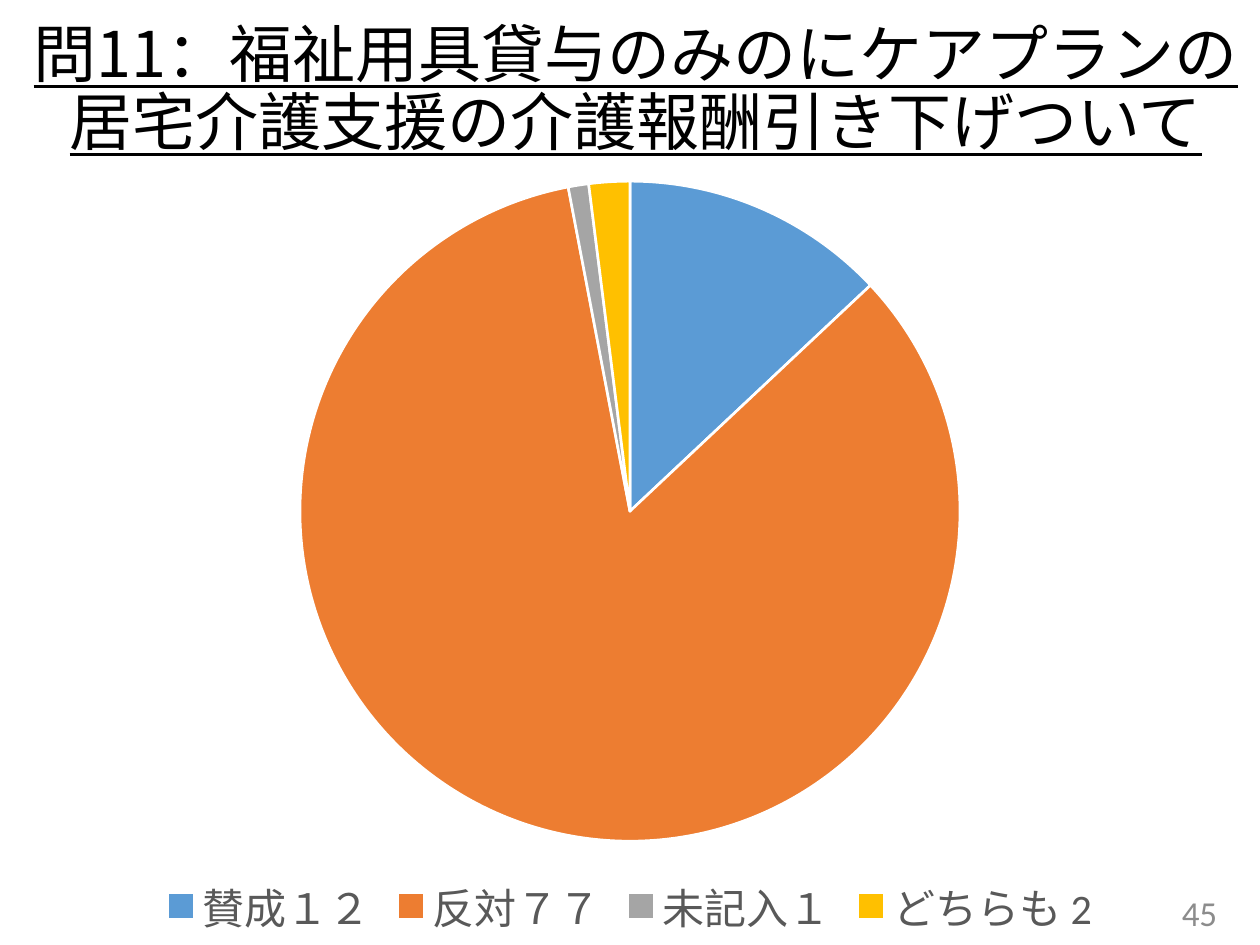
from dataclasses import dataclass

from lxml.etree import SubElement
from pptx import Presentation
from pptx.chart.data import CategoryChartData
from pptx.dml.color import RGBColor
from pptx.enum.chart import XL_CHART_TYPE as ChartType, XL_LEGEND_POSITION as LegendPosition
from pptx.enum.text import MSO_ANCHOR as Anchor, MSO_AUTO_SIZE as AutoSize, PP_ALIGN as Align
from pptx.oxml.ns import qn
from pptx.util import Inches, Pt


@dataclass(frozen=True)
class Theme:
    title_font: str = "Noto Sans CJK JP"
    body_font: str = "Calibri"
    title_color: str = "000000"
    legend_color: str = "595959"
    number_color: str = "8C8C8C"
    border_color: str = "FFFFFF"
    title_size: int = 36
    legend_size: int = 24
    number_size: int = 20
    chart_size: int = 10
    border_width: float = 1.5


@dataclass(frozen=True)
class Answer:
    label: str
    percent: int
    color: str


@dataclass(frozen=True)
class Box:
    left: float
    top: float
    width: float
    height: float

    def lengths(self) -> tuple:
        return tuple(map(Inches, (self.left, self.top, self.width, self.height)))


THEME = Theme()
TITLE = "問11：福祉用具貸与のみのにケアプランの居宅介護支援の介護報酬引き下げついて"
TITLE_BOX = Box(0.09, 0.14, 9.91, 1.16)
CHART_BOX = Box(0, 1.3, 10, 6.2)
NUMBER_BOX = Box(7.51, 7.04, 2.25, 0.4)
ANSWERS = [
    Answer("賛成１２", 13, "5B9BD5"),
    Answer("反対７７", 84, "ED7D31"),
    Answer("未記入１", 1, "A5A5A5"),
    Answer("どちらも 2", 2, "FFC000"),
]


def style_font(font, name: str, size: float, color: str) -> None:
    font.name = name
    font.size = Pt(size)
    font.color.rgb = RGBColor.from_string(color)


def write_line(shape, text: str, align, name: str, size: float, color: str):
    frame = shape.text_frame
    frame.word_wrap = True
    frame.auto_size = AutoSize.NONE
    frame.vertical_anchor = Anchor.MIDDLE
    paragraph = frame.paragraphs[0]
    paragraph.alignment = align
    run = paragraph.add_run()
    run.text = text
    style_font(run.font, name, size, color)
    return paragraph, run


def add_title(slide) -> None:
    title = slide.shapes.title
    title.left, title.top, title.width, title.height = TITLE_BOX.lengths()
    paragraph, run = write_line(
        title, TITLE, Align.CENTER, THEME.title_font, THEME.title_size, THEME.title_color
    )
    paragraph.line_spacing = 0.9
    run.font.underline = True
    SubElement(run.font._element, qn("a:ea"), typeface=THEME.title_font)


def add_answer_chart(slide, answers: list[Answer]) -> None:
    data = CategoryChartData()
    data.categories = [answer.label for answer in answers]
    data.add_series("Series 1", [answer.percent for answer in answers])
    chart = slide.shapes.add_chart(ChartType.PIE, *CHART_BOX.lengths(), data).chart
    style_font(chart.font, THEME.body_font, THEME.chart_size, THEME.title_color)
    chart.has_title = False
    chart.has_legend = True
    chart.legend.position = LegendPosition.BOTTOM
    chart.legend.include_in_layout = False
    style_font(chart.legend.font, THEME.body_font, THEME.legend_size, THEME.legend_color)
    plot = chart.plots[0]
    plot.vary_by_categories = True
    for index, answer in enumerate(answers):
        point_format = plot.series[0].points[index].format
        point_format.fill.solid()
        point_format.fill.fore_color.rgb = RGBColor.from_string(answer.color)
        point_format.line.color.rgb = RGBColor.from_string(THEME.border_color)
        point_format.line.width = Pt(THEME.border_width)


def add_page_number(slide, number: str) -> None:
    box = slide.shapes.add_textbox(*NUMBER_BOX.lengths())
    write_line(box, number, Align.RIGHT, THEME.body_font, THEME.number_size, THEME.number_color)


def main() -> None:
    presentation = Presentation()
    presentation.slide_width = Inches(10)
    presentation.slide_height = Inches(7.5)
    slide = presentation.slides.add_slide(presentation.slide_layouts.get_by_name("Title Only"))
    add_title(slide)
    add_page_number(slide, "45")
    add_answer_chart(slide, ANSWERS)
    presentation.save("out.pptx")


if __name__ == "__main__":
    main()
